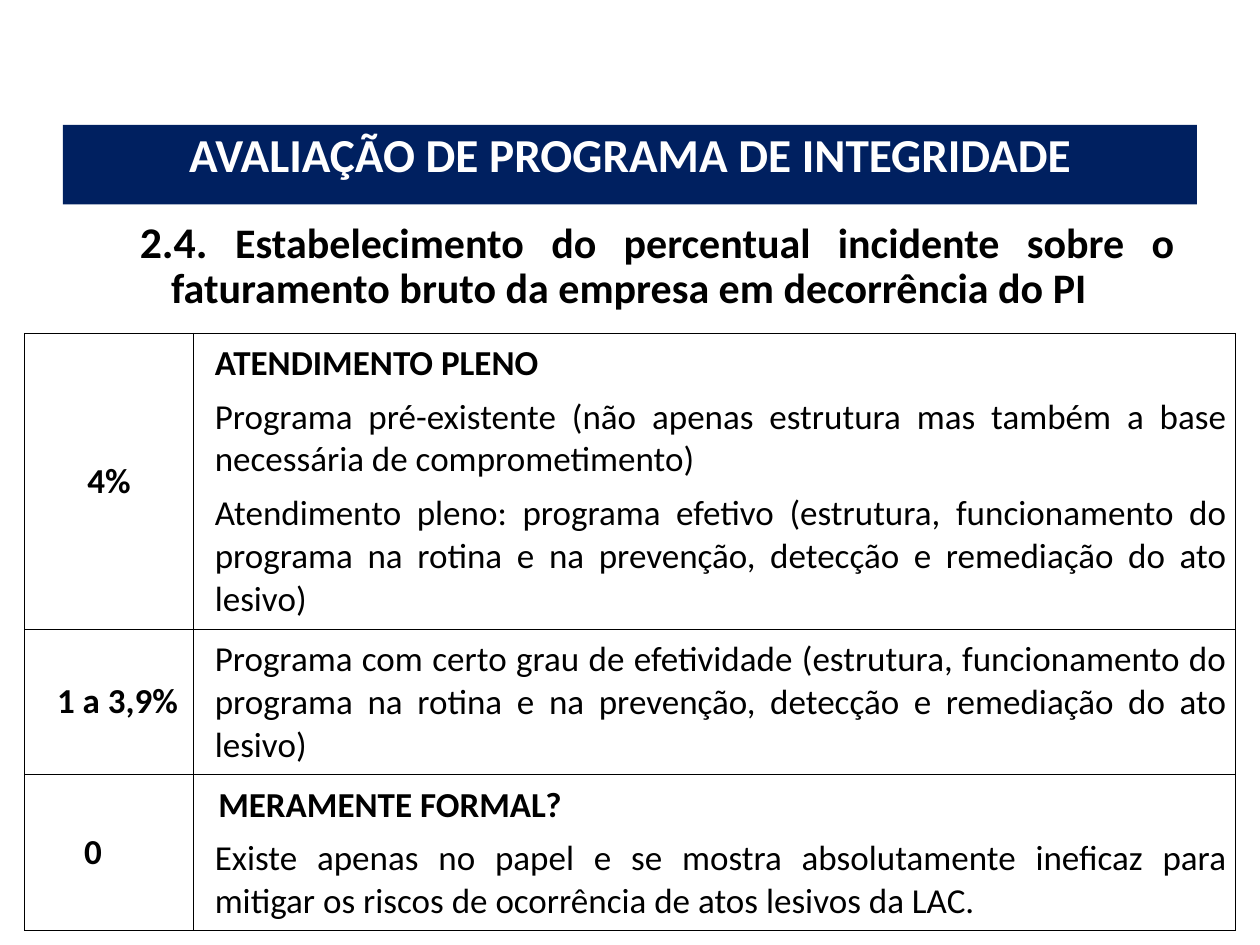
from dataclasses import dataclass

from lxml import etree
from pptx import Presentation
from pptx.dml.color import RGBColor
from pptx.enum.shapes import MSO_SHAPE
from pptx.enum.text import MSO_ANCHOR, PP_ALIGN
from pptx.oxml.ns import qn
from pptx.util import Cm, Pt

LEFT, CENTER, JUSTIFY = PP_ALIGN.LEFT, PP_ALIGN.CENTER, PP_ALIGN.JUSTIFY
TOP, MIDDLE = MSO_ANCHOR.TOP, MSO_ANCHOR.MIDDLE
RECTANGLE = MSO_SHAPE.RECTANGLE


@dataclass(frozen=True)
class Theme:
    font: str = "Calibri"
    navy: str = "002060"
    white: str = "FFFFFF"
    black: str = "000000"
    title_size: int = 27
    number_size: int = 25
    subtitle_size: int = 24
    table_size: int = 20
    border_width: float = 0.5


THEME = Theme()

TITLE = "AVALIAÇÃO DE PROGRAMA DE INTEGRIDADE"
SUBTITLE = [
    ("2.4. ", THEME.number_size),
    ("Estabelecimento do percentual incidente sobre o faturamento bruto "
     "da empresa em decorrência do PI", THEME.subtitle_size),
]

# Label insets (left, right) in cm place each percentage in its cell.
ROWS = [
    {"label": "4%", "align": CENTER, "insets": (0.18, 0.18), "height": 5.96,
     "text": [
         ("ATENDIMENTO PLENO", True, JUSTIFY, 0.25),
         ("Programa pré-existente (não apenas estrutura mas também a base "
          "necessária de comprometimento)", False, JUSTIFY, 0.25),
         ("Atendimento pleno: programa efetivo (estrutura, funcionamento do "
          "programa na rotina e na prevenção, detecção e remediação do ato "
          "lesivo)", False, JUSTIFY, 0.25),
     ]},
    {"label": "1 a 3,9%", "align": LEFT, "insets": (0.65, 0.1), "height": 2.94,
     "text": [
         ("Programa com certo grau de efetividade (estrutura, funcionamento do "
          "programa na rotina e na prevenção, detecção e remediação do ato "
          "lesivo)", False, JUSTIFY, 0.25),
     ]},
    {"label": "0", "align": CENTER, "insets": (0.18, 0.83), "height": 3.14,
     "text": [
         ("MERAMENTE FORMAL?", True, LEFT, 0.32),
         ("Existe apenas no papel e se mostra absolutamente ineficaz para "
          "mitigar os riscos de ocorrência de atos lesivos da LAC.",
          False, JUSTIFY, 0.25),
     ]},
]
COLUMN_WIDTHS = [3.4, 21.01]
CELL_INSET = 0.18


def color(value):
    return RGBColor.from_string(value)


def add_span(para, text, size, bold=True, fill=THEME.black):
    span = para.add_run()
    span.text = text
    span.font.name = THEME.font
    span.font.size = Pt(size)
    span.font.bold = bold
    span.font.color.rgb = color(fill)


def set_indent(para, left, first=0):
    properties = para._p.get_or_add_pPr()
    properties.set("marL", str(Cm(left)))
    properties.set("indent", str(Cm(first)))


def style_cell(cell, insets):
    """Clear the fill, centre vertically and draw all four borders."""
    cell.margin_left, cell.margin_right = (Cm(inset) for inset in insets)
    cell.margin_top = cell.margin_bottom = Cm(CELL_INSET)
    cell.vertical_anchor = MIDDLE
    properties = cell._tc.get_or_add_tcPr()
    for side in ("a:lnL", "a:lnR", "a:lnT", "a:lnB"):
        line = etree.SubElement(properties, qn(side),
                                w=str(Pt(THEME.border_width)))
        fill = etree.SubElement(line, qn("a:solidFill"))
        etree.SubElement(fill, qn("a:srgbClr"), val=THEME.black)
    cell.fill.background()


def fill_cell(cell, paragraphs):
    frame = cell.text_frame
    for index, (text, bold, align, indent) in enumerate(paragraphs):
        para = frame.add_paragraph() if index else frame.paragraphs[0]
        para.alignment = align
        para.space_after = Pt(6)
        set_indent(para, indent)
        add_span(para, text, THEME.table_size, bold)


def add_title(page):
    box = page.shapes.add_shape(RECTANGLE, Cm(1.27), Cm(2.52), Cm(22.86), Cm(1.6))
    box.shadow.inherit = False
    box.fill.solid()
    box.fill.fore_color.rgb = color(THEME.navy)
    box.line.fill.background()
    box.text_frame.word_wrap = True
    box.text_frame.vertical_anchor = TOP
    para = box.text_frame.paragraphs[0]
    para.alignment = CENTER
    para.line_spacing = 0.9
    add_span(para, TITLE, THEME.title_size, fill=THEME.white)


def add_subtitle(page):
    box = page.shapes.add_textbox(Cm(1.3), Cm(4.32), Cm(22.63), Cm(3.4))
    box.text_frame.word_wrap = True
    para = box.text_frame.paragraphs[0]
    para.alignment = JUSTIFY
    para.line_spacing = 0.9
    set_indent(para, 1.9, -0.63)
    for text, size in SUBTITLE:
        add_span(para, text, size)


def add_percentages(page):
    height = sum(row["height"] for row in ROWS)
    table = page.shapes.add_table(
        len(ROWS), len(COLUMN_WIDTHS), Cm(0.5), Cm(6.72),
        Cm(sum(COLUMN_WIDTHS)), Cm(height)).table
    table.first_row = table.horz_banding = False
    for column, width in zip(table.columns, COLUMN_WIDTHS):
        column.width = Cm(width)
    for index, row in enumerate(ROWS):
        table.rows[index].height = Cm(row["height"])
        label, description = table.rows[index].cells
        style_cell(label, row["insets"])
        fill_cell(label, [(row["label"], True, row["align"], 0)])
        style_cell(description, (CELL_INSET, CELL_INSET))
        fill_cell(description, row["text"])


def main():
    deck = Presentation()
    deck.slide_width, deck.slide_height = Cm(25.4), Cm(19.05)
    page = deck.slides.add_slide(deck.slide_layouts[6])
    add_title(page)
    add_subtitle(page)
    add_percentages(page)
    deck.save("out.pptx")


if __name__ == "__main__":
    main()
